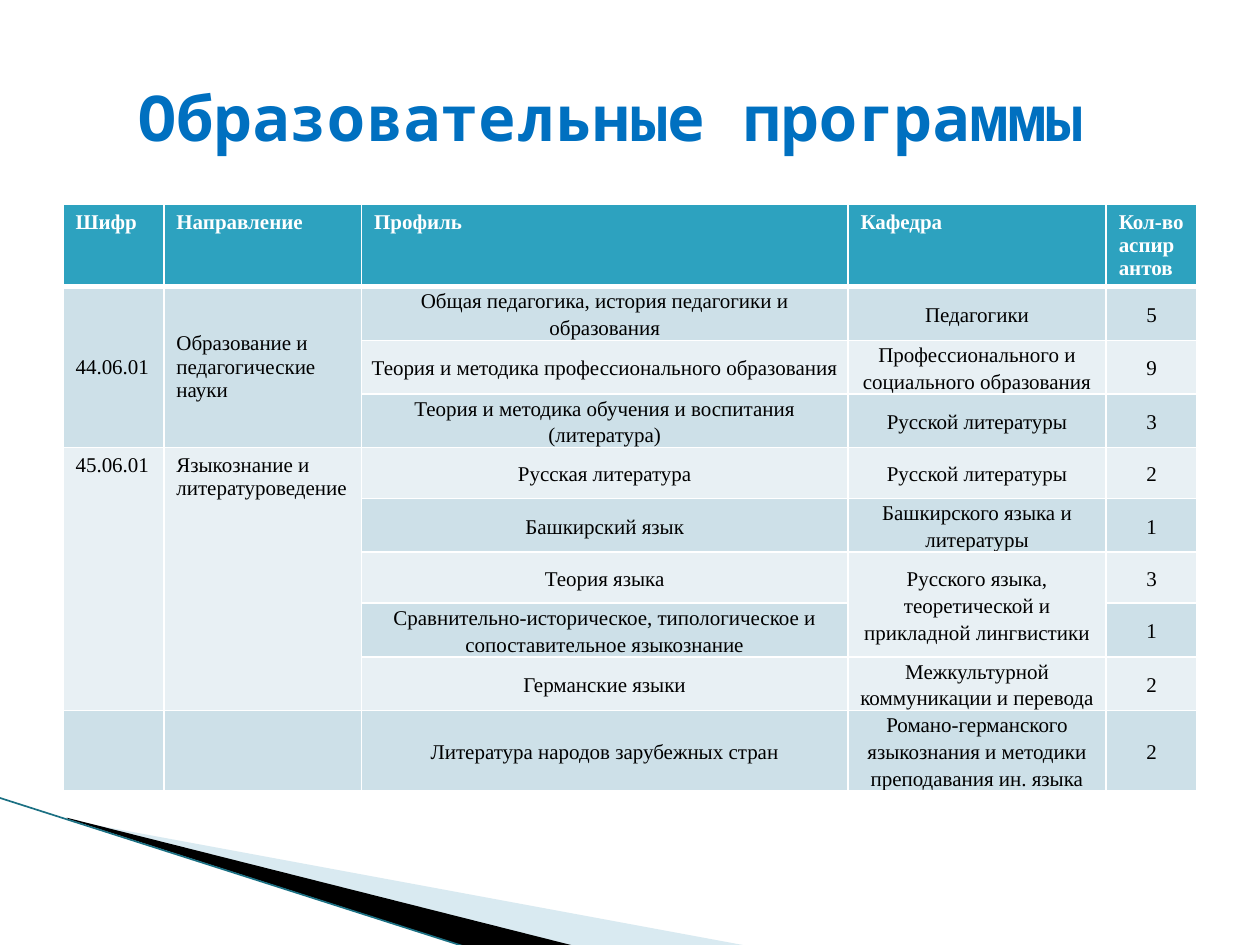
from pptx import Presentation
from pptx.dml.color import RGBColor as RGB
from pptx.enum.shapes import MSO_CONNECTOR as CONN
from pptx.enum.text import MSO_ANCHOR as ANCHOR, PP_ALIGN as ALIGN
from pptx.oxml.ns import qn
from pptx.util import Inches, Pt
from lxml.etree import SubElement

COLORS = {
    "title": "0070C0", "header": "2DA2BF", "odd": "CDE0E8", "even": "E8F0F4",
    "white": "FFFFFF", "black": "000000", "wedge": "A0CBDC", "edge": "1B7083",
}
RGBS = {name: RGB.from_string(value) for name, value in COLORS.items()}


def set_font(font, **values):
    font.color.rgb = RGBS[values.pop("color")]
    for name, value in values.items():
        setattr(font, name, value)


def set_border(cell, side, width):
    ln = SubElement(cell._tc.get_or_add_tcPr(), qn("a:ln" + side), w=str(Pt(width)))
    fill = SubElement(ln, qn("a:solidFill"))
    SubElement(fill, qn("a:srgbClr"), val=COLORS["white"])


prs = Presentation()
prs.slide_width, prs.slide_height = Inches(10), Inches(7.5)
s = prs.slides.add_slide(prs.slide_layouts[5])
margin, content_width = Inches(0.5), Inches(9)

# Corner wedges, in hundredths of an inch
wedges = [
    ("wedge", [(55, 651), (595, 751), (456, 751), (55, 650)]),
    ("black", [(53, 649), (457, 751), (372, 752), (54, 650)]),
]
for color, points in wedges:
    fb = s.shapes.build_freeform(*points[0], scale=Inches(0.01))
    fb.add_line_segments(points[1:], close=True)
    sp = fb.convert_to_shape()
    sp.shadow.inherit = False
    sp.fill.solid()
    sp.fill.fore_color.rgb = RGBS[color]
    sp.line.fill.background()
    if color == "wedge":
        clr = sp._element.spPr.find(qn("a:solidFill"))[0]
        SubElement(clr, qn("a:alpha"), val="40000")

# Edge line along the wedges
edge = s.shapes.add_connector(CONN.STRAIGHT, Inches(-0.01), Inches(6.33),
                              Inches(3.71), Inches(7.52))
edge.line.color.rgb = RGBS["edge"]
edge.line.width = Pt(0.95)
SubElement(edge._element.spPr, qn("a:effectLst"))

# Title
title = s.shapes.title
title.left, title.top = margin, Inches(0.3)
title.width, title.height = content_width, Inches(1.25)
tf = title.text_frame
tf.vertical_anchor = ANCHOR.MIDDLE
p = tf.paragraphs[0]
p.alignment = ALIGN.CENTER
r = p.add_run()
r.text = "Образовательные программы "
set_font(r.font, name="Noto Sans Mono", size=Pt(36), bold=True, color="title")

# Programme table; an empty string is a blank or merged cell
rows = [
    ("Шифр", "Направление", "Профиль", "Кафедра", "Кол-во аспирантов"),
    ("44.06.01", "Образование и педагогические науки",
     "Общая педагогика, история педагогики и образования", "Педагогики", "5"),
    ("", "", "Теория и методика профессионального образования",
     "Профессионального и социального образования", "9"),
    ("", "", "Теория и методика обучения и воспитания (литература)",
     "Русской литературы", "3"),
    ("45.06.01", "Языкознание и литературоведение",
     "Русская литература", "Русской литературы", "2"),
    ("", "", "Башкирский язык", "Башкирского языка и литературы", "1"),
    ("", "", "Теория языка",
     "Русского языка, теоретической и прикладной лингвистики", "3"),
    ("", "", "Сравнительно-историческое, типологическое и "
     "сопоставительное языкознание", "", "1"),
    ("", "", "Германские языки", "Межкультурной коммуникации и перевода", "2"),
    ("", "", "Литература народов зарубежных стран",
     "Романо-германского языкознания и методики преподавания ин. языка", "2"),
]
col_widths = [0.8, 1.57, 3.86, 2.05, 0.72]
row_height = Inches(0.405)
table = s.shapes.add_table(len(rows), len(col_widths), margin, Inches(1.62),
                           content_width, row_height * len(rows)).table
for col, width in zip(table.columns, col_widths):
    col.width = Inches(width)

for i, row in enumerate(rows):
    table.rows[i].height = row_height
    for j, text in enumerate(row):
        cell = table.cell(i, j)
        for side in "LRTB":
            heavy = (i, side) in ((0, "B"), (1, "T"))
            set_border(cell, side, 3 if heavy else 1)
        cell.fill.solid()
        band = "header" if i == 0 else "odd" if i % 2 else "even"
        cell.fill.fore_color.rgb = RGBS[band]
        p = cell.text_frame.paragraphs[0]
        style = dict(name="Times New Roman", size=Pt(12), bold=i == 0,
                     color="black" if i else "white")
        set_font(p.font, **style)
        if text:
            r = p.add_run()
            r.text = text
            set_font(r.font, **style)
        else:
            p._p.get_or_add_endParaRPr().set("sz", "1200")
        if i and j >= 2:
            p.alignment, p.line_spacing = ALIGN.CENTER, 1.15
            cell.margin_left = cell.margin_right = Inches(0.07)
            cell.margin_top = cell.margin_bottom = 0
        if i and (j >= 2 or i <= 3):
            cell.vertical_anchor = ANCHOR.MIDDLE

# Merged cells: first row, last row, column
for first, last, col in [(1, 3, 0), (1, 3, 1), (4, 8, 0), (4, 8, 1), (6, 7, 3)]:
    table.cell(first, col).merge(table.cell(last, col))

prs.save("out.pptx")
